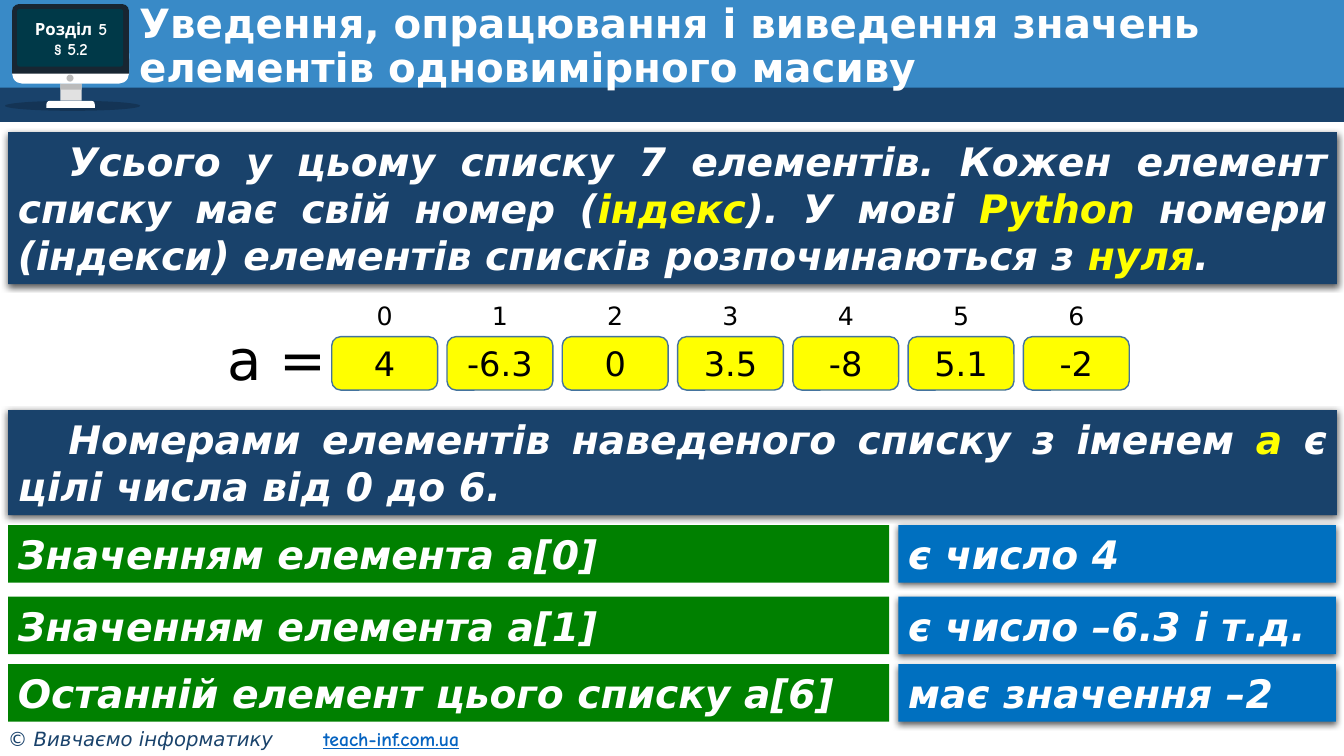
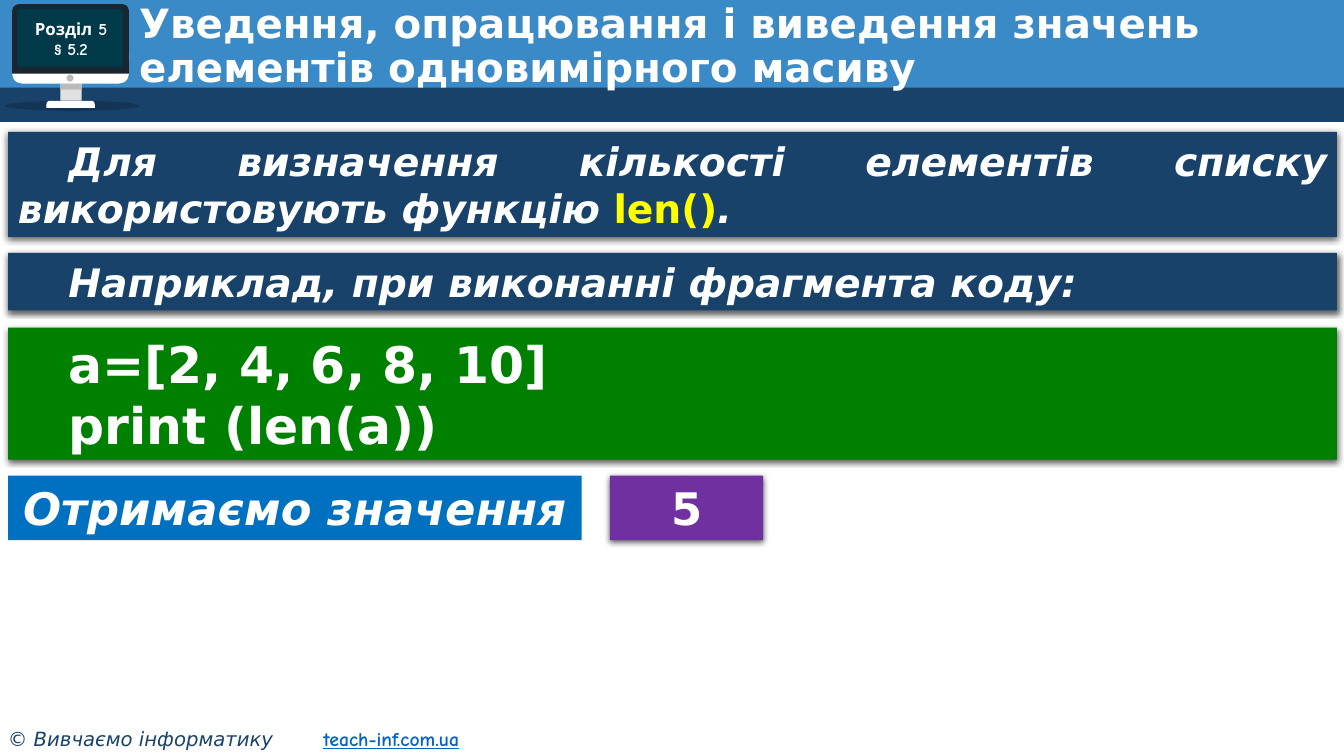
from lxml.etree import SubElement
from pptx import Presentation
from pptx.dml.color import RGBColor
from pptx.enum.shapes import MSO_SHAPE
from pptx.enum.text import MSO_ANCHOR, MSO_AUTO_SIZE, PP_ALIGN
from pptx.oxml.ns import qn
from pptx.util import Inches, Pt

WHITE, BLACK, YELLOW = "FFFFFF", "000000", "FFFF00"
NAVY, SKY, BLUE, GREEN, PURPLE = "19426B", "398AC7", "0070C0", "008000", "7030A0"
FONT, HAND_FONT = "DejaVu Sans", "Comic Neue"
TITLE = "Уведення, опрацювання і виведення значень елементів одновимірного масиву"
MARGIN, FULL_WIDTH = 0.08, 13.18


def rgb(value):
    return RGBColor.from_string(value)


class Lesson:
    def __init__(self):
        self.deck = Presentation()
        self.deck.slide_width, self.deck.slide_height = Inches(13.33), Inches(7.5)
        self.page = None

    def new_page(self):
        self.page = self.deck.slides.add_slide(self.deck.slide_layouts[5])
        self.shape(0, 0, 13.33, 0.91, SKY)
        self.shape(0, 0.87, 13.33, 0.34, NAVY)
        self.monitor()
        self.footer()
        self.title()

    def title(self):
        title = self.page.shapes.title
        title.left, title.top = Inches(1.28), Inches(0.18)
        title.width, title.height = Inches(11.72), Inches(0.58)
        self.set_text(title, [TITLE], 28.8, bold=True)
        title.text_frame.paragraphs[0].line_spacing = 0.9
        title.element.getparent().append(title.element)  # above the bands

    def monitor(self):
        ground = self.shape(0.05, 1, 1.34, 0.1, BLACK, MSO_SHAPE.OVAL)
        color = ground.element.spPr.find(qn("a:solidFill"))[0]
        SubElement(color, qn("a:alpha"), val="20000")
        self.shape(0.6, 0.83, 0.21, 0.17, "E1E1E1")
        self.shape(0.6, 0.83, 0.21, 0.06, "BBBBBB")
        self.shape(0.46, 1, 0.48, 0.07, WHITE, MSO_SHAPE.ROUND_2_SAME_RECTANGLE, 0.5)
        self.shape(0.12, 0.43, 1.16, 0.4, WHITE, MSO_SHAPE.ROUNDED_RECTANGLE, 0.25)
        self.shape(0.12, 0.04, 1.16, 0.69, "182632", MSO_SHAPE.ROUND_2_SAME_RECTANGLE, 0.1)
        self.shape(0.66, 0.74, 0.07, 0.07, "BBBBBB", MSO_SHAPE.OVAL)
        self.shape(0.17, 0.09, 1.05, 0.57, "003948", MSO_SHAPE.ROUNDED_RECTANGLE, 0.04)
        self.label(0.13, 0.09, 1.15, 0.59, ["Розділ 5", "§ 5.2"], 12, WHITE,
                   name=HAND_FONT, bold=True, align=PP_ALIGN.CENTER)

    def footer(self):
        box = self.page.shapes.add_textbox(Inches(-0.02), Inches(7.16), Inches(5.23), Inches(0.34))
        box.text_frame.word_wrap = True
        paragraph = box.text_frame.paragraphs[0]
        tabs = SubElement(paragraph._p.get_or_add_pPr(), qn("a:tabLst"))
        SubElement(tabs, qn("a:tab"), pos=str(Inches(3.13)), algn="l")
        paragraph.font.size = Pt(14)
        for text, name, color, is_link in (
            ("© Вивчаємо інформатику\t", FONT, NAVY, False),
            ("teach-inf.com.ua", HAND_FONT, "0563C1", True),
        ):
            span = paragraph.add_run()
            span.text = text
            span.font.name = name
            span.font.color.rgb = rgb(color)
            span.font.bold = span.font.underline = is_link
            span.font.italic = not is_link

    def shape(self, left, top, width, height, fill, kind=MSO_SHAPE.RECTANGLE,
              rounding=None, line=None):
        shape = self.page.shapes.add_shape(
            kind, Inches(left), Inches(top), Inches(width), Inches(height))
        shape.shadow.inherit = False
        shape.fill.solid()
        shape.fill.fore_color.rgb = rgb(fill)
        if line:
            shape.line.color.rgb = rgb(line)
            shape.line.width = Pt(1)
        else:
            shape.line.fill.background()
        if rounding is not None:
            shape.adjustments[0] = rounding
        return shape

    def panel(self, left, top, width, height, fill, lines, size=28, shadow=True, **style):
        panel = self.shape(left, top, width, height, fill)
        if shadow:
            effects = panel.element.spPr.find(qn("a:effectLst"))
            outer = SubElement(effects, qn("a:outerShdw"), blurRad=str(Pt(4.5)),
                               dist=str(Pt(1.5)), dir="5400000", algn="t", rotWithShape="0")
            color = SubElement(outer, qn("a:srgbClr"), val=BLACK)
            SubElement(color, qn("a:alpha"), val="63000")
        self.set_text(panel, lines, size, **{"bold": True, "italic": True, **style})

    def wide_panel(self, top, height, fill, lines, **style):
        self.panel(MARGIN, top, FULL_WIDTH, height, fill, lines,
                   align=PP_ALIGN.JUSTIFY, indent=0.5, **style)

    def label(self, left, top, width, height, lines, size, color, **style):
        box = self.page.shapes.add_textbox(
            Inches(left), Inches(top), Inches(width), Inches(height))
        self.set_text(box, lines, size, color, **style)

    def set_text(self, box, lines, size, color=WHITE, name=FONT, bold=False, italic=False,
                 align=PP_ALIGN.LEFT, indent=0, upright_marks=False):
        """Fill a box with lines of text; parts between asterisks turn yellow."""
        frame = box.text_frame
        frame.word_wrap = True
        frame.auto_size = MSO_AUTO_SIZE.NONE
        frame.vertical_anchor = MSO_ANCHOR.MIDDLE
        for number, line in enumerate(lines):
            paragraph = frame.add_paragraph() if number else frame.paragraphs[0]
            paragraph.alignment = align
            if indent:
                paragraph._p.get_or_add_pPr().set("indent", str(Inches(indent)))
            font = paragraph.font
            font.name, font.size, font.bold, font.italic = name, Pt(size), bold, italic
            font.color.rgb = rgb(color)
            for part, text in enumerate(line.split("*")):
                span = paragraph.add_run()
                span.text = text
                if part % 2:
                    span.font.color.rgb = rgb(YELLOW)
                    if upright_marks:
                        span.font.italic = False

    def array(self, left, top, values):
        """Draw a row of cells with the index above each one."""
        width, height, pitch = 1.05, 0.53, 6.86 / 6
        self.label(left - 1.13, top - 0.17, 1.3, 0.77, ["a ="], 40, BLACK)
        for index, value in enumerate(values):
            x = left + index * pitch
            cell = self.shape(x, top, width, height, YELLOW,
                              MSO_SHAPE.ROUNDED_RECTANGLE, line="43739E")
            self.set_text(cell, [value], 24, BLACK, align=PP_ALIGN.CENTER)
            self.label(x, top - 0.41, width, 0.4, [str(index)], 18, BLACK,
                       align=PP_ALIGN.CENTER)


def indexes_page(lesson):
    lesson.new_page()
    lesson.wide_panel(1.31, 1.51, NAVY, [
        "Усього у цьому списку 7 елементів. Кожен елемент списку має свій номер (*індекс*). "
        "У мові *Python* номери (індекси) елементів списків розпочинаються з *нуля*."])
    lesson.array(3.29, 3.34, ["4", "-6.3", "0", "3.5", "-8", "5.1", "-2"])
    lesson.wide_panel(4.07, 1.04, NAVY, [
        "Номерами елементів наведеного списку з іменем *а* є цілі числа від 0 до 6."])
    for top, element, value in (
        (5.21, "Значенням елемента a[0]", "є число 4"),
        (5.92, "Значенням елемента a[1]", "є число –6.3 і т.д."),
        (6.59, "Останній елемент цього списку a[6]", "має значення –2"),
    ):
        lesson.panel(8.91, top, 4.34, 0.57, BLUE, [value])
        lesson.panel(MARGIN, top, 8.74, 0.57, GREEN, [element], shadow=False)


def length_page(lesson):
    lesson.new_page()
    lesson.wide_panel(1.31, 1.04, NAVY, [
        "Для визначення кількості елементів списку використовують функцію *len()*."],
        upright_marks=True)
    lesson.wide_panel(2.51, 0.57, NAVY, ["Наприклад, при виконанні фрагмента коду:"])
    lesson.wide_panel(3.25, 1.31, GREEN, ["a=[2, 4, 6, 8, 10]", "print (len(a))"],
                      size=36, italic=False)
    lesson.panel(6.05, 4.72, 1.52, 0.64, PURPLE, ["5"], size=32, italic=False,
                 align=PP_ALIGN.CENTER)
    lesson.panel(MARGIN, 4.72, 5.69, 0.64, BLUE, ["Отримаємо значення"], size=32,
                 shadow=False, align=PP_ALIGN.CENTER)


def main():
    lesson = Lesson()
    indexes_page(lesson)
    length_page(lesson)
    lesson.deck.save("out.pptx")


if __name__ == "__main__":
    main()
